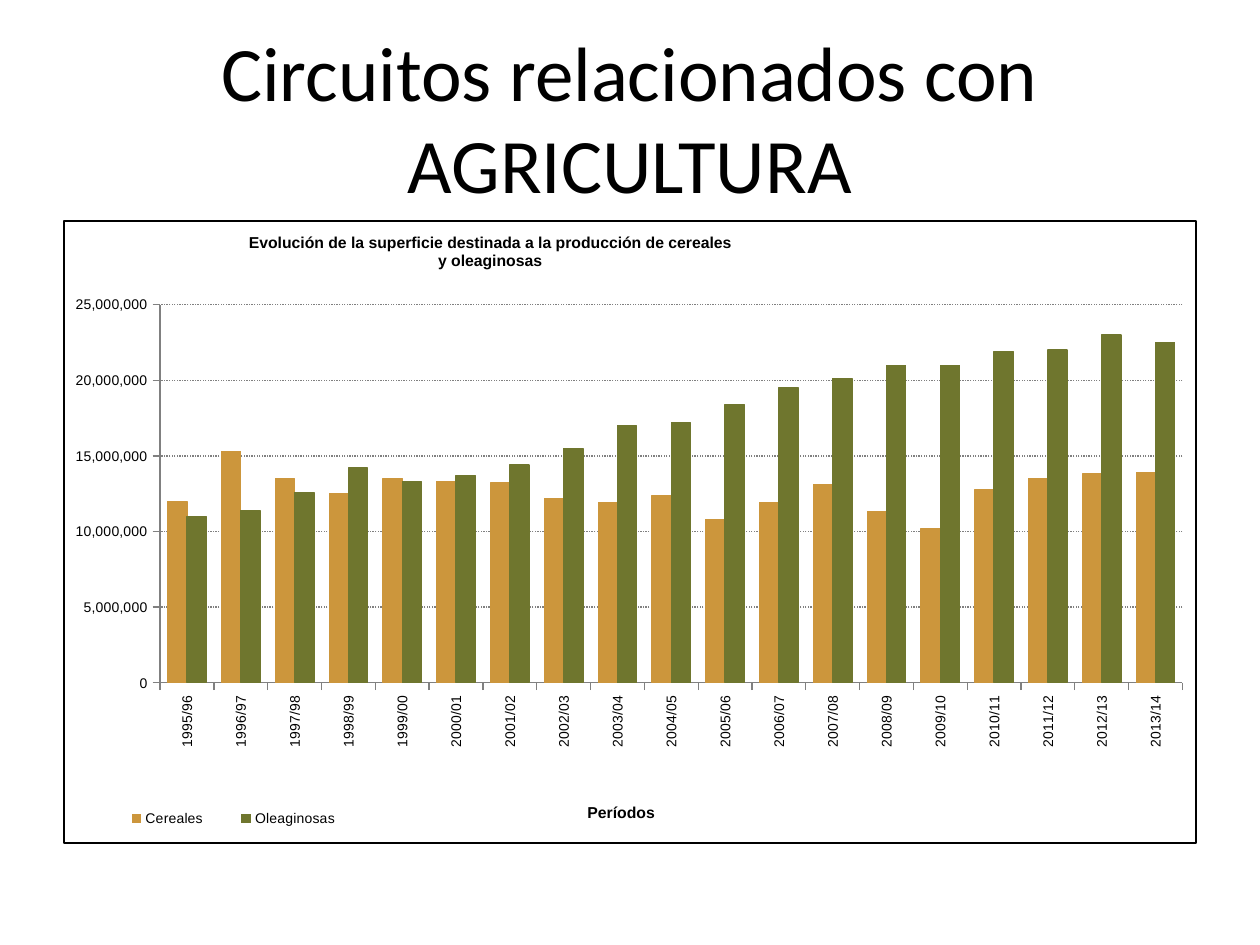
from pptx import Presentation
from pptx.chart.data import CategoryChartData
from pptx.dml.color import RGBColor
from pptx.enum.chart import XL_CHART_TYPE, XL_LEGEND_POSITION, XL_TICK_MARK
from pptx.enum.dml import MSO_LINE
from pptx.enum.text import MSO_ANCHOR, PP_ALIGN
from pptx.oxml import parse_xml
from pptx.oxml.ns import nsdecls, qn
from pptx.util import Inches, Pt

BLACK, GRAY = "000000", "808080"
CROPS = [
    ("Cereales", "CC963C",
     [12, 15.3, 13.5, 12.5, 13.5, 13.3, 13.2, 12.2, 11.9, 12.4,
      10.8, 11.9, 13.1, 11.3, 10.2, 12.8, 13.5, 13.8, 13.9]),
    ("Oleaginosas", "6F762E",
     [11, 11.4, 12.6, 14.2, 13.3, 13.7, 14.4, 15.5, 17, 17.2,
      18.4, 19.5, 20.1, 21, 21, 21.9, 22, 23, 22.5]),
]


def color(code):
    return RGBColor.from_string(code)


def style(font, size, bold=False, name="Arial"):
    font.name = name
    font.size = Pt(size)
    font.bold = bold
    font.color.rgb = color(BLACK)


def stroke(line, code, width=0.75):
    line.color.rgb = color(code)
    line.width = Pt(width)


def place(node, spot, box, inner=False):
    for old in node.findall(qn("c:layout")):
        node.remove(old)
    target = '<c:layoutTarget val="inner"/>' if inner else ""
    modes = '<c:xMode val="edge"/><c:yMode val="edge"/>'
    sides = "".join(f'<c:{k} val="{v}"/>' for k, v in zip("xywh", box))
    node.insert(spot, parse_xml(
        f'<c:layout {nsdecls("c")}><c:manualLayout>'
        f'{target}{modes}{sides}</c:manualLayout></c:layout>'))


def add_title(slide):
    title = slide.shapes.title
    title.left, title.top = Inches(0.5), Inches(0.3)
    title.width, title.height = Inches(9), Inches(1.25)
    frame = title.text_frame
    frame.text = "Circuitos relacionados con AGRICULTURA"
    frame.word_wrap = True
    frame.vertical_anchor = MSO_ANCHOR.MIDDLE
    para = frame.paragraphs[0]
    para.alignment = PP_ALIGN.CENTER
    style(para.runs[0].font, 44, name="Calibri")


def label(title, text):
    frame = title.text_frame
    frame.text = text
    for para in frame.paragraphs:
        para.alignment = PP_ALIGN.CENTER
        style(para.font, 9, True)
        for run in para.runs:
            style(run.font, 9, True)


def set_axis(axis):
    axis.major_tick_mark = XL_TICK_MARK.OUTSIDE
    axis.minor_tick_mark = XL_TICK_MARK.NONE
    stroke(axis.format.line, GRAY)
    style(axis.tick_labels.font, 8)


def add_chart(slide):
    data = CategoryChartData(number_format="#,##0")
    data.categories = [f"{y}/{(y + 1) % 100:02d}" for y in range(1995, 2014)]
    for name, _, vals in CROPS:
        data.add_series(name, [round(v * 1000000) for v in vals])
    chart = slide.shapes.add_chart(
        XL_CHART_TYPE.COLUMN_CLUSTERED, Inches(0.5), Inches(1.75),
        Inches(9), Inches(4.95), data).chart
    style(chart.font, 8)
    plot = chart.plots[0]
    plot.gap_width = 80
    plot.overlap = 0
    plot.vary_by_categories = False
    for bars, (_, code, _) in zip(plot.series, CROPS):
        bars.format.fill.solid()
        bars.format.fill.fore_color.rgb = color(code)
        stroke(bars.format.line, code)
    return chart


def set_axes(chart):
    cats, vals = chart.category_axis, chart.value_axis
    for axis in (cats, vals):
        set_axis(axis)
    label(cats.axis_title, "Períodos")
    body = cats._element.find(qn("c:txPr")).find(qn("a:bodyPr"))
    body.set("rot", "-5400000")
    body.set("vert", "horz")
    vals.minimum_scale, vals.maximum_scale = 0, 25000000
    vals.major_unit = 5000000
    vals.tick_labels.number_format = "#,##0"
    vals.tick_labels.number_format_is_linked = False
    grid = vals.major_gridlines.format.line
    stroke(grid, GRAY)
    grid.dash_style = MSO_LINE.ROUND_DOT


def set_frame(chart):
    label(chart.chart_title,
          "Evolución de la superficie destinada a la producción de cereales\n"
          "y oleaginosas")
    chart.has_legend = True
    legend = chart.legend
    legend.position = XL_LEGEND_POSITION.BOTTOM
    legend.include_in_layout = False
    style(legend.font, 8)
    root = chart._chartSpace
    body = root.find(qn("c:chart"))
    title = body.find(qn("c:title"))
    title.find(qn("c:overlay")).set("val", "1")
    place(title, 1, (0.16, 0.01))
    place(chart.category_axis.axis_title._element, 1, (0.46, 0.93))
    place(body.find(qn("c:legend")), 1, (0.03, 0.93, 0.24, 0.06))
    place(body.find(qn("c:plotArea")), 0, (0.085, 0.134, 0.903, 0.608), True)
    body.addnext(parse_xml(
        f'<c:spPr {nsdecls("c", "a")}><a:noFill/><a:ln w="{Pt(1)}">'
        f'<a:solidFill><a:srgbClr val="{BLACK}"/></a:solidFill>'
        '</a:ln></c:spPr>'))


def main():
    deck = Presentation()
    deck.slide_width, deck.slide_height = Inches(10), Inches(7.5)
    slide = deck.slides.add_slide(deck.slide_layouts[5])
    add_title(slide)
    chart = add_chart(slide)
    set_axes(chart)
    set_frame(chart)
    deck.save("out.pptx")


if __name__ == "__main__":
    main()
